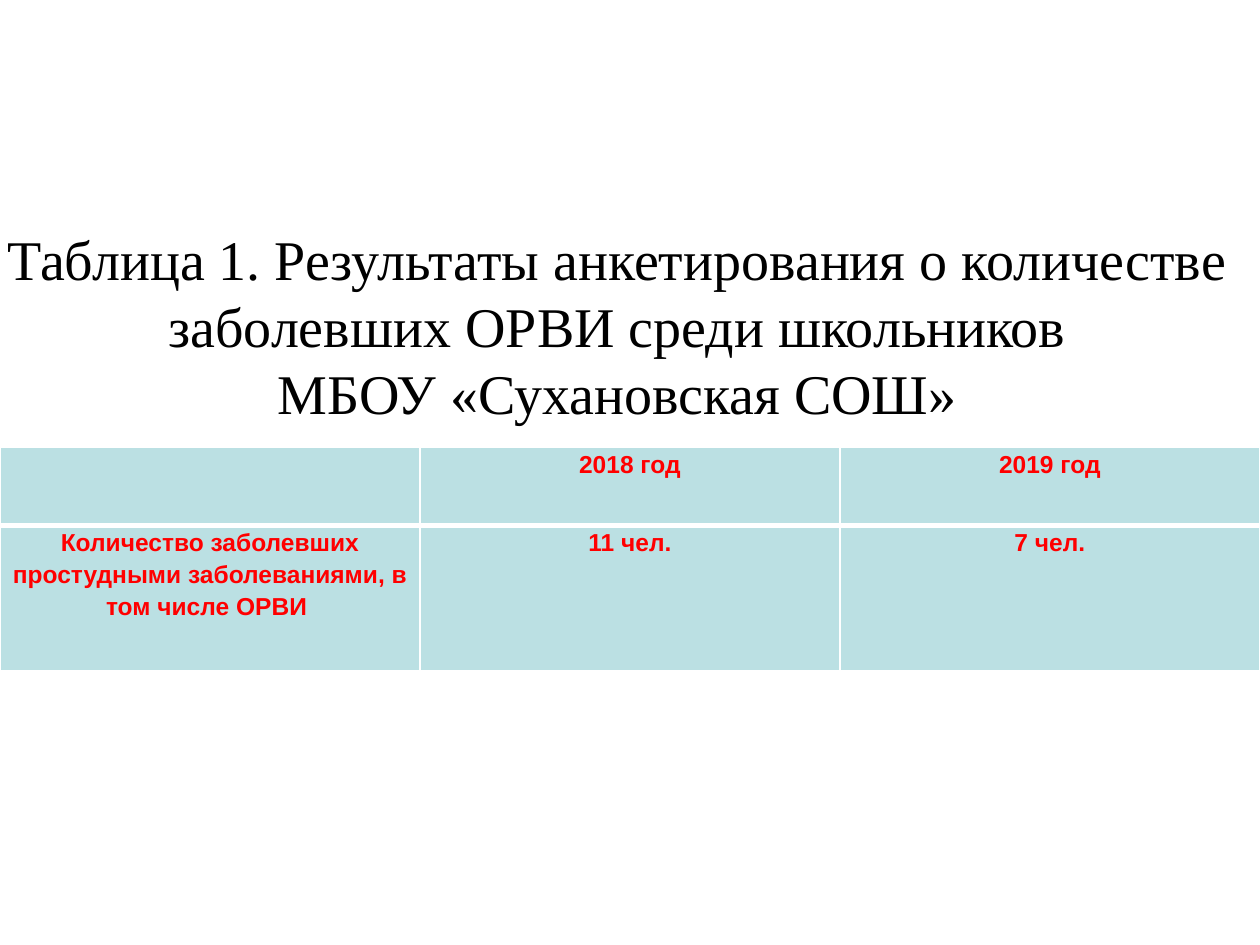
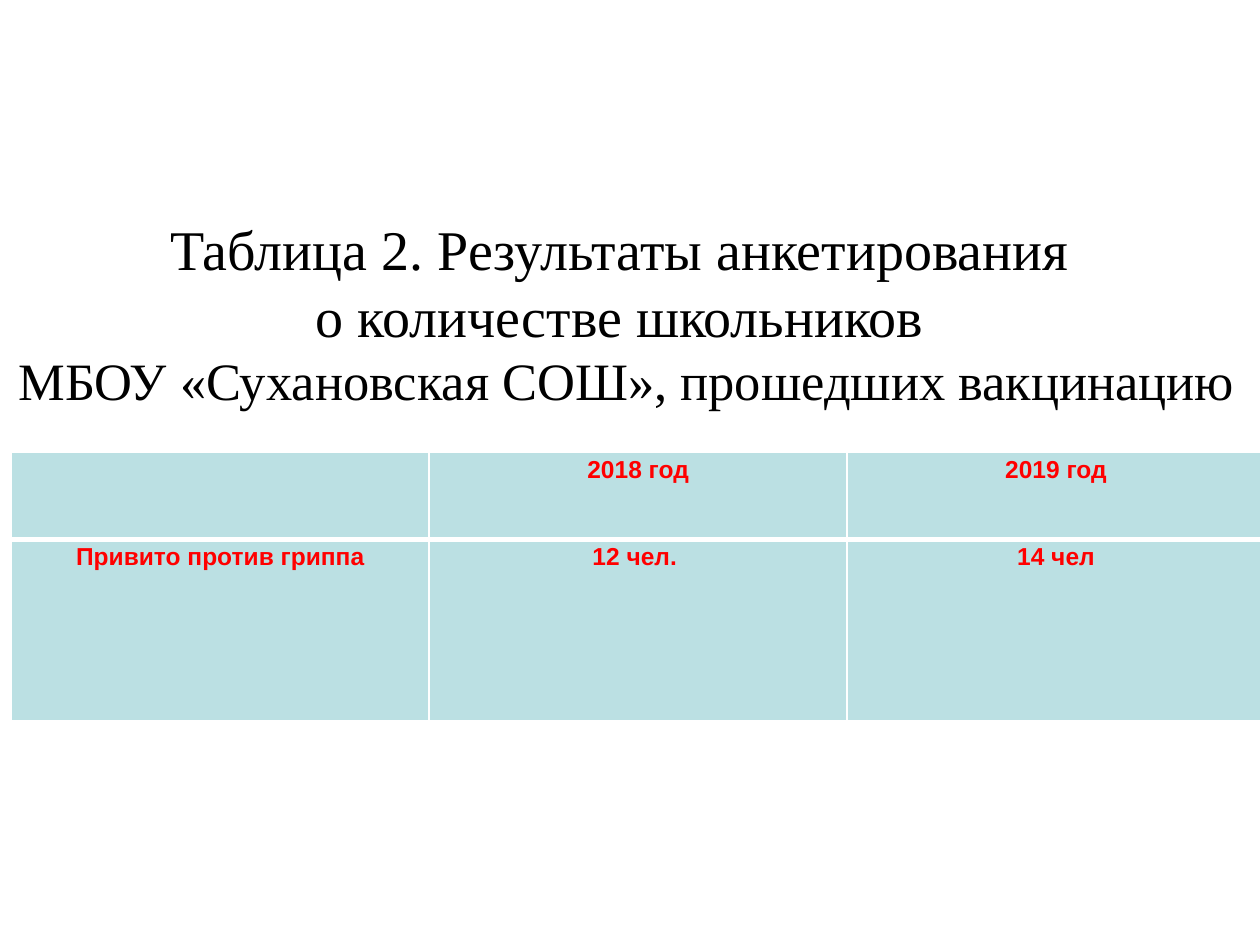
from dataclasses import dataclass

from lxml import etree
from pptx import Presentation
from pptx.dml.color import RGBColor
from pptx.enum import text as txt
from pptx.oxml import ns
from pptx.util import Cm, Pt

BLACK = RGBColor(0x00, 0x00, 0x00)
RED = RGBColor(0xFF, 0x00, 0x00)
AQUA = RGBColor(0xBB, 0xE0, 0xE3)
WHITE = RGBColor(0xFF, 0xFF, 0xFF)
SERIF, SANS = "Times New Roman", "Arial"
YEARS = ["", "2018 год", "2019 год"]


@dataclass
class Box:
    """Left, top, width and height in centimetres."""
    left: float
    top: float
    width: float
    height: float


@dataclass
class Page:
    lines: list[tuple[str, int]]
    head: Box
    grid: Box
    first: float  # height of the header row
    row: list[str]


PAGES = [
    Page([("Таблица 1. Результаты анкетирования о количестве ", 32),
          ("заболевших ОРВИ среди школьников ", 32),
          ("МБОУ «Сухановская СОШ» ", 32)],
         Box(-0.23, 4.37, 25.63, 4.37), Box(0, 9.02, 25.4, 4.5), 1.57,
         ["Количество заболевших простудными заболеваниями, в том числе ОРВИ ",
          "11 чел.", "7 чел."]),
    Page([("Таблица 2. Результаты анкетирования ", 32),
          ("о количестве школьников ", 32),
          ("МБОУ «Сухановская СОШ», прошедших вакцинацию", 30)],
         Box(0, 4.17, 25.27, 4.27), Box(0.23, 9.12, 25.27, 5.41), 1.75,
         ["Привито против гриппа", "12 чел. ", "14 чел"]),
]


def write(para, words: str, *, size: int, font: str, color: RGBColor,
          bold: bool = False, space: float | None = None, after: int = 0) -> None:
    """Put centred, formatted text into a paragraph."""
    para.alignment = txt.PP_ALIGN.CENTER
    para.line_spacing = space
    para.space_after = Pt(after)
    run = para.add_run()
    run.text = words
    run.font.size, run.font.name, run.font.bold = Pt(size), font, bold
    run.font.color.rgb = color


def edge(cell, side: str, width: int) -> None:
    """Add a white border to one side (L, R, T or B) of a cell."""
    line = etree.SubElement(cell._tc.get_or_add_tcPr(), ns.qn(f"a:ln{side}"),
                            w=str(Pt(width)))
    fill = etree.SubElement(line, ns.qn("a:solidFill"))
    etree.SubElement(fill, ns.qn("a:srgbClr"), val=str(WHITE))


def title(slide, page: Page) -> None:
    shape, box = slide.shapes.title, page.head
    shape.left, shape.top = Cm(box.left), Cm(box.top)
    shape.width, shape.height = Cm(box.width), Cm(box.height)
    frame = shape.text_frame
    frame.word_wrap = False
    frame.auto_size = txt.MSO_AUTO_SIZE.SHAPE_TO_FIT_TEXT
    frame.vertical_anchor = txt.MSO_ANCHOR.MIDDLE
    for i, (words, size) in enumerate(page.lines):
        para = frame.add_paragraph() if i else frame.paragraphs[0]
        write(para, words, size=size, font=SERIF, color=BLACK)


def table(slide, page: Page) -> None:
    rows, box = [YEARS, page.row], page.grid
    grid = slide.shapes.add_table(len(rows), len(YEARS), Cm(box.left), Cm(box.top),
                                  Cm(box.width), Cm(box.height)).table
    grid.rows[0].height = Cm(page.first)
    grid.rows[1].height = Cm(box.height - page.first)
    for r, row in enumerate(rows):
        # The rule between the two rows is thicker
        sides = {"L": 1, "R": 1, "T": 3 if r else 1, "B": 1 if r else 3}
        for c, words in enumerate(row):
            cell = grid.cell(r, c)
            for side, width in sides.items():
                edge(cell, side, width)
            cell.fill.solid()
            cell.fill.fore_color.rgb = AQUA
            cell.margin_left = cell.margin_right = Cm(0.18)
            cell.margin_top = cell.margin_bottom = 0
            if words:
                write(cell.text_frame.paragraphs[0], words, size=14, font=SANS,
                      color=RED, bold=True, space=1.15, after=10)


def main() -> None:
    deck = Presentation()
    deck.slide_width, deck.slide_height = Cm(25.4), Cm(19.05)
    for page in PAGES:
        slide = deck.slides.add_slide(deck.slide_layouts[5])  # title only
        title(slide, page)
        table(slide, page)
    deck.save("out.pptx")


if __name__ == "__main__":
    main()
